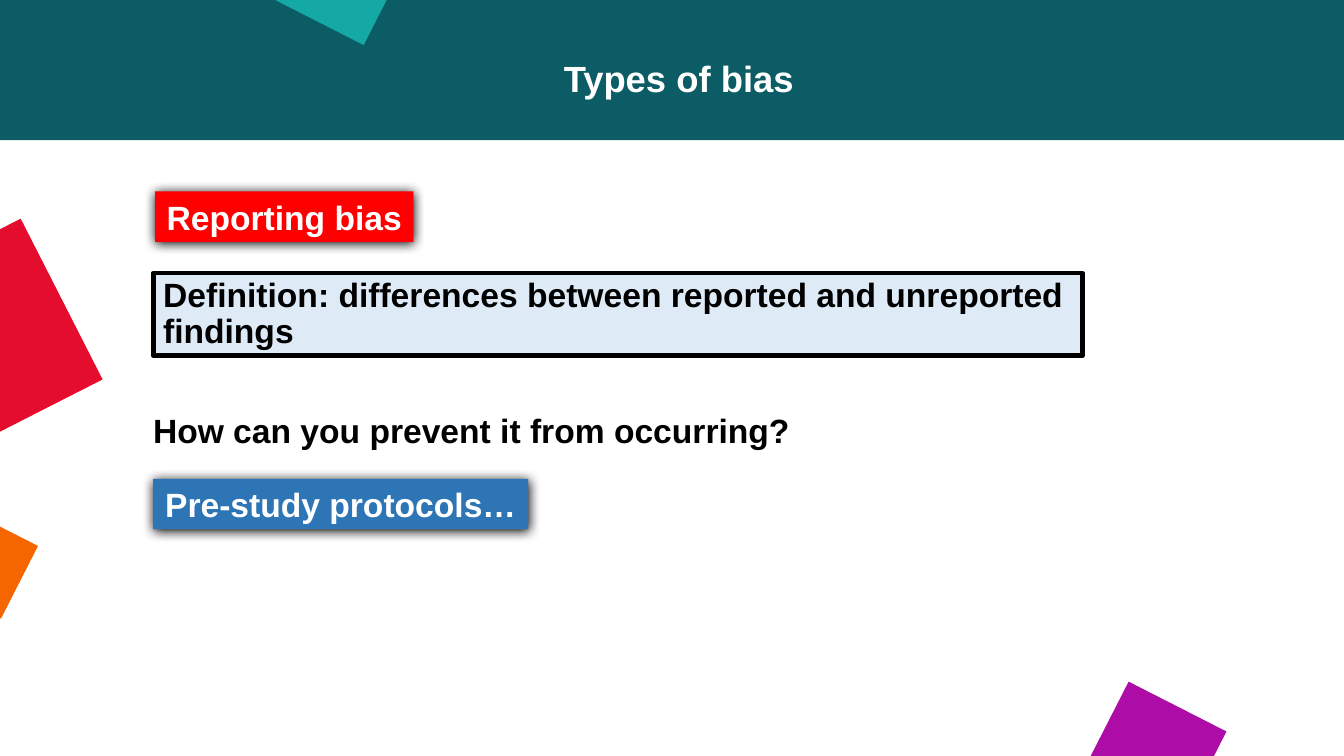
from dataclasses import dataclass

import lxml.etree
import pptx
import pptx.dml.color
import pptx.enum.shapes
import pptx.enum.text
import pptx.oxml.ns
import pptx.util

COLUMNS, ROWS = 160, 90
COLORS = {
    "white": "FFFFFF", "black": "000000", "petrol": "0C5C65",
    "crimson": "E50D2E", "purple": "AD0DA6", "orange": "F56600",
    "teal": "15A9A6", "pale": "DEEBF7", "red": "FF0000", "blue": "2E75B6",
}
ALIGN = pptx.enum.text.PP_ALIGN
ANCHOR = pptx.enum.text.MSO_ANCHOR


@dataclass(frozen=True)
class Cell:
    col: float
    row: float
    cols: float
    rows: float


@dataclass(frozen=True)
class Block:
    cell: Cell
    fill: str
    rotation: float = 0


@dataclass(frozen=True)
class Label:
    block: Block
    text: str


BLOCKS = [
    Block(Cell(0, 0, COLUMNS, 16.68), "petrol"),
    Block(Cell(-13.08, 29.76, 21.6, 21.48), "crimson", 333),
    Block(Cell(130.68, 83.4, 13.08, 13.08), "purple", 27),
    Block(Cell(-7.32, 62.16, 10.2, 9.72), "orange", 27),
    Block(Cell(34.92, -8.76, 11.76, 12.12), "teal", 27),
]
DEFINITION = Label(Block(Cell(18.24, 32.52, 110.64, 9.84), "pale"),
                   "Definition: differences between reported and unreported findings")
TAGS = [
    Label(Block(Cell(18.48, 22.8, 30.72, 6), "red"), "Reporting bias"),
    Label(Block(Cell(18.24, 57, 44.64, 6), "blue"), "Pre-study protocols…"),
]
QUESTION = Cell(17.04, 48.72, 87.48, 4.92)
TITLE = Cell(37.08, 6.72, 87.48, 4.92)

prs = pptx.Presentation()
prs.slide_width = pptx.util.Inches(13.33)
prs.slide_height = pptx.util.Inches(7.5)


def rgb(name: str) -> pptx.dml.color.RGBColor:
    return pptx.dml.color.RGBColor.from_string(COLORS[name])


def box(cell: Cell) -> tuple[int, int, int, int]:
    x, y = prs.slide_width / COLUMNS, prs.slide_height / ROWS
    return (round(cell.col * x), round(cell.row * y),
            round(cell.cols * x), round(cell.rows * y))


def add_block(s, block: Block):
    sp = s.shapes.add_shape(pptx.enum.shapes.MSO_SHAPE.RECTANGLE, *box(block.cell))
    sp.shadow.inherit = False
    sp.fill.solid()
    sp.fill.fore_color.rgb = rgb(block.fill)
    sp.line.fill.background()
    sp.rotation = block.rotation
    return sp


def write(sp, text: str, color: str, size: float = 24, align=ALIGN.LEFT,
          anchor=ANCHOR.TOP, spacing: float = 0.9, wrap: bool = True) -> None:
    tf = sp.text_frame
    tf.text = text
    tf.word_wrap = wrap
    tf.auto_size = pptx.enum.text.MSO_AUTO_SIZE.NONE
    tf.vertical_anchor = anchor
    p = tf.paragraphs[0]
    p.alignment = align
    p.line_spacing = spacing
    p.space_before = pptx.util.Pt(0)
    p.font.name = "Arial"
    p.font.size = pptx.util.Pt(size)
    p.font.bold = True
    p.font.color.rgb = rgb(color)


def add_shadow(sp) -> None:
    qn = pptx.oxml.ns.qn
    effects = sp.element.spPr.find(qn("a:effectLst"))
    shadow = lxml.etree.SubElement(
        effects, qn("a:outerShdw"), blurRad=str(pptx.util.Pt(8.5)),
        dist=str(pptx.util.Pt(1)), dir="5400000", algn="t", rotWithShape="0")
    lxml.etree.SubElement(shadow, qn("a:srgbClr"), val=COLORS["black"])


def add_definition(s, label: Label) -> None:
    sp = add_block(s, label.block)
    sp.line.color.rgb = rgb("black")
    sp.line.width = pptx.util.Pt(3.25)
    write(sp, label.text, "black", anchor=ANCHOR.MIDDLE)


def add_tag(s, label: Label) -> None:
    sp = add_block(s, label.block)
    add_shadow(sp)
    write(sp, label.text, "white", align=ALIGN.CENTER, spacing=1.0, wrap=False)


def add_title(s, cell: Cell, text: str) -> None:
    sp = s.shapes.title
    sp.left, sp.top, sp.width, sp.height = box(cell)
    write(sp, text, "white", size=26, align=ALIGN.CENTER)
    s.shapes.element.append(sp.element)


def main() -> None:
    s = prs.slides.add_slide(prs.slide_layouts[5])
    s.background.fill.solid()
    s.background.fill.fore_color.rgb = rgb("white")
    for block in BLOCKS:
        add_block(s, block)
    add_definition(s, DEFINITION)
    for tag in TAGS:
        add_tag(s, tag)
    write(s.shapes.add_textbox(*box(QUESTION)),
          "How can you prevent it from occurring?", "black")
    add_title(s, TITLE, "Types of bias")
    prs.save("out.pptx")


if __name__ == "__main__":
    main()
